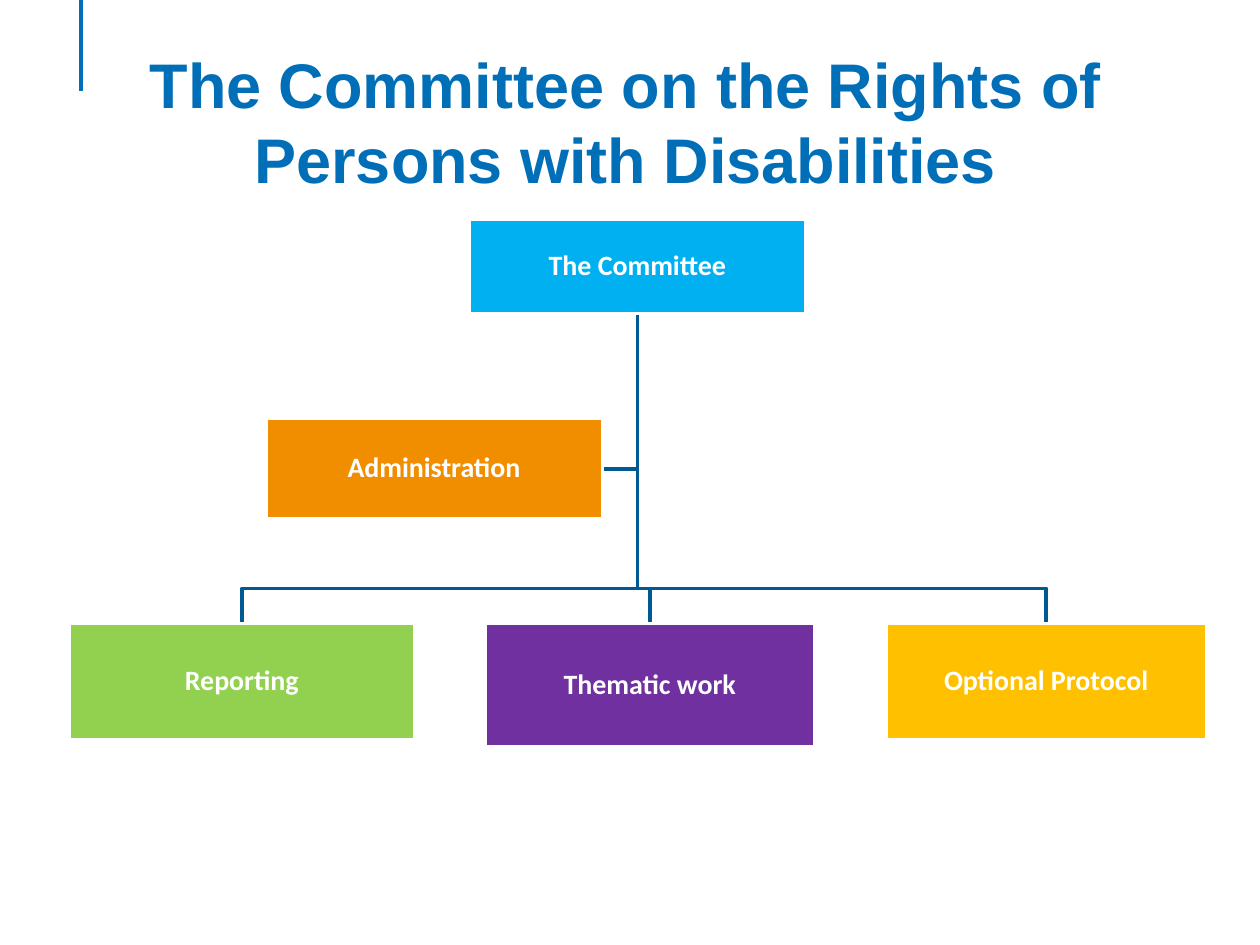
from lxml import etree
from pptx import Presentation
from pptx.dml.color import RGBColor
from pptx.enum.shapes import MSO_CONNECTOR, MSO_SHAPE
from pptx.enum.text import MSO_ANCHOR, PP_ALIGN
from pptx.oxml.ns import qn
from pptx.util import Pt

STRAIGHT, RECT = MSO_CONNECTOR.STRAIGHT, MSO_SHAPE.RECTANGLE
TOP, MIDDLE, CENTER = MSO_ANCHOR.TOP, MSO_ANCHOR.MIDDLE, PP_ALIGN.CENTER

COLORS = {"title": "006FB7", "link": "005993", "white": "FFFFFF", "sky": "00B0F0",
          "orange": "F18E00", "green": "92D050", "purple": "7030A0", "gold": "FFC000"}

TITLE = "The Committee on the Rights of Persons with Disabilities"
COMMITTEE = ("The Committee", "sky", 267.9, 125.4, 192.7, 53.7)
ADMINISTRATION = ("Administration", "orange", 151.9, 239.2, 192.3, 57.4)
BRANCH_TOP = 356.4
BRANCHES = [
    ("Reporting", "green", 39.6, BRANCH_TOP, 197.3, 66.2),
    ("Thematic work", "purple", 277, BRANCH_TOP, 188.6, 70.6),
    ("Optional Protocol", "gold", 506.2, BRANCH_TOP, 183.2, 66.2),
]
BUS_Y = 336.2


def color(name):
    return RGBColor.from_string(COLORS[name])


def set_text(s, text, font, size, ink, anchor, inset):
    tf = s.text_frame
    tf.word_wrap = True
    tf.vertical_anchor = anchor
    tf.margin_left = tf.margin_right = tf.margin_top = tf.margin_bottom = Pt(inset)
    tf.text = text
    p = tf.paragraphs[0]
    p.alignment = CENTER
    f = p.runs[0].font
    f.name, f.size, f.bold = font, Pt(size), True
    f.color.rgb = color(ink)
    return p


def set_line(s, name):
    s.line.color.rgb = color(name)
    s.line.width = Pt(2)


def add_link(shapes, points):
    (x, y), *rest = [(Pt(a), Pt(b)) for a, b in points]
    builder = shapes.build_freeform(x, y)
    builder.add_line_segments(rest, close=False)
    s = builder.convert_to_shape()
    s.shadow.inherit = False
    s.fill.background()
    set_line(s, "link")


def add_box(shapes, text, fill, *frame):
    s = shapes.add_shape(RECT, *map(Pt, frame))
    s.shadow.inherit = False
    s.fill.solid()
    s.fill.fore_color.rgb = color(fill)
    set_line(s, "white")
    set_text(s, text, "Calibri", 16, "white", MIDDLE, 0.8).line_spacing = 0.9


def main():
    prs = Presentation()
    prs.slide_width, prs.slide_height = Pt(720), Pt(540)
    shapes = prs.slides.add_slide(prs.slide_layouts[6]).shapes

    accent = shapes.add_connector(STRAIGHT, Pt(46.3), Pt(0), Pt(46.3), Pt(51.8))
    etree.SubElement(accent._element.spPr, qn("a:effectLst"))
    set_line(accent, "title")

    title = shapes.add_textbox(Pt(25.2), Pt(21.6), Pt(664.6), Pt(85.7))
    set_text(title, TITLE, "Arial", 36, "title", TOP, 4.7).line_spacing = Pt(43)

    _, _, left, top, width, height = COMMITTEE
    trunk_x, trunk_top = left + width / 2, top + height
    _, _, left, top, width, height = ADMINISTRATION
    side_y = top + height / 2
    add_link(shapes, [(trunk_x, trunk_top), (trunk_x, side_y), (left + width, side_y)])
    for _, _, left, top, width, _ in BRANCHES:
        x = left + width / 2
        add_link(shapes, [(trunk_x, trunk_top), (trunk_x, BUS_Y), (x, BUS_Y), (x, top)])

    for box in [COMMITTEE, *BRANCHES, ADMINISTRATION]:
        add_box(shapes, *box)

    prs.save("out.pptx")


if __name__ == "__main__":
    main()
